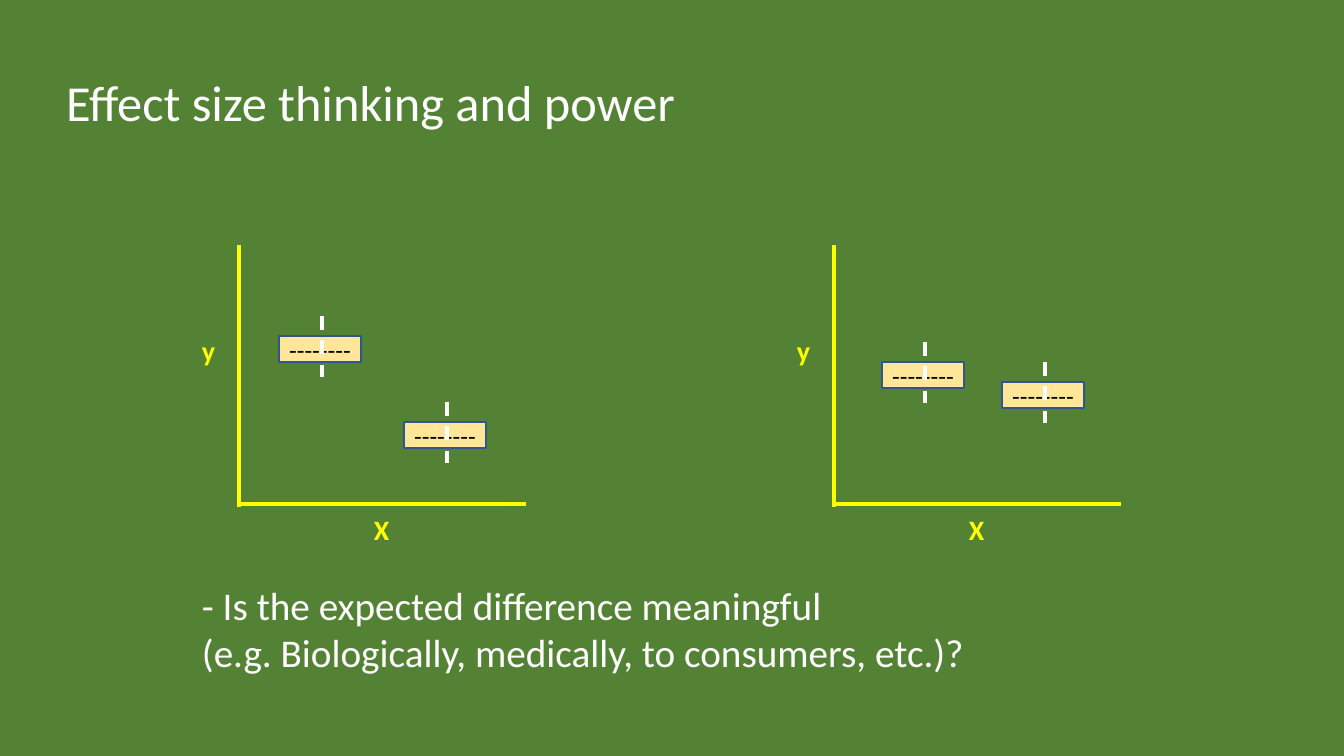
"""Build a slide comparing a large and a small effect size."""
from lxml import etree
from pptx import Presentation
from pptx import util as u
from pptx.dml.color import RGBColor
from pptx.enum import dml, shapes, text
from pptx.oxml.ns import qn

TITLE = "Effect size thinking and power"
QUESTION = [
    "- Is the expected difference meaningful",
    "(e.g. Biologically, medically, to consumers, etc.)?",
]
PLOTS = [
    {"axis": 239, "groups": [(279, 336), (404, 422)]},
    {"axis": 834, "groups": [(882, 362), (1002, 382)]},
]
BAR_TEXT = "--------"
FONT = "Calibri"
GREEN, WHITE, YELLOW = "548235", "FFFFFF", "FFFF00"
CREAM, BLUE, BLACK = "FFE699", "325491", "000000"

SLIDE_WIDTH, SLIDE_HEIGHT = 1344, 756
AXIS_TOP, AXIS_END, BASELINE, AXIS_LENGTH = 245, 507, 504, 287
BAR_WIDTH, BAR_HEIGHT = 82, 26
WHISKER_SHIFT, WHISKER_RISE, WHISKER_LENGTH = 43, 20, 61


def px(*lengths):
    return [u.Emu(round(length * 12192000 / SLIDE_WIDTH)) for length in lengths]


def color(value):
    return RGBColor.from_string(value)


def write(shape, lines, size, tint, bold=False, align=text.PP_ALIGN.LEFT,
          anchor=text.MSO_ANCHOR.TOP, wrap=False):
    frame = shape.text_frame
    frame.text = "\n".join(lines)
    frame.word_wrap = wrap
    frame.auto_size = text.MSO_AUTO_SIZE.NONE
    frame.vertical_anchor = anchor
    for para in frame.paragraphs:
        para.alignment = align
        for span in para.runs:
            span.font.name = FONT
            span.font.size = u.Pt(size)
            span.font.bold = bold
            span.font.color.rgb = color(tint)


def add_text(page, area, lines, size, tint, bold=False):
    write(page.shapes.add_textbox(*px(*area)), lines, size, tint, bold)


def add_line(page, ends, tint, width, dash=None):
    line = page.shapes.add_connector(shapes.MSO_CONNECTOR.STRAIGHT, *px(*ends))
    line.line.color.rgb = color(tint)
    line.line.width = u.Pt(width)
    if dash:
        line.line.dash_style = dash
    etree.SubElement(line._element.spPr, qn("a:effectLst"))


def add_group(page, left, top):
    bar = page.shapes.add_shape(
        shapes.MSO_SHAPE.RECTANGLE, *px(left, top, BAR_WIDTH, BAR_HEIGHT))
    bar.shadow.inherit = False
    bar.fill.solid()
    bar.fill.fore_color.rgb = color(CREAM)
    bar.line.color.rgb = color(BLUE)
    bar.line.width = u.Pt(1)
    write(bar, [BAR_TEXT], 18, BLACK, align=text.PP_ALIGN.CENTER,
          anchor=text.MSO_ANCHOR.MIDDLE)
    x, start = left + WHISKER_SHIFT, top - WHISKER_RISE
    add_line(page, (x, start, x, start + WHISKER_LENGTH), WHITE, 2.5,
             dml.MSO_LINE.DASH)


def add_plot(page, axis, groups):
    add_line(page, (axis, AXIS_TOP, axis, AXIS_END), YELLOW, 3.25)
    add_line(page, (axis + AXIS_LENGTH, BASELINE, axis, BASELINE), YELLOW, 3.25)
    add_text(page, (axis + 125, 508, 36, 44), ["X"], 20, YELLOW, True)
    add_text(page, (axis - 47, 329, 34, 44), ["y"], 20, YELLOW, True)
    for left, top in groups:
        add_group(page, left, top)


def main():
    deck = Presentation()
    deck.slide_width, deck.slide_height = px(SLIDE_WIDTH, SLIDE_HEIGHT)
    page = deck.slides.add_slide(deck.slide_layouts[5])
    page.background.fill.solid()
    page.background.fill.fore_color.rgb = color(GREEN)
    title = page.shapes.title
    title.left, title.top, title.width, title.height = px(56, 66, 1080, 72)
    write(title, [TITLE], 36, WHITE, wrap=True)
    add_text(page, (192, 576, 790, 105), QUESTION, 28, WHITE)
    for plot in PLOTS:
        add_plot(page, plot["axis"], plot["groups"])
    deck.save("out.pptx")


if __name__ == "__main__":
    main()
